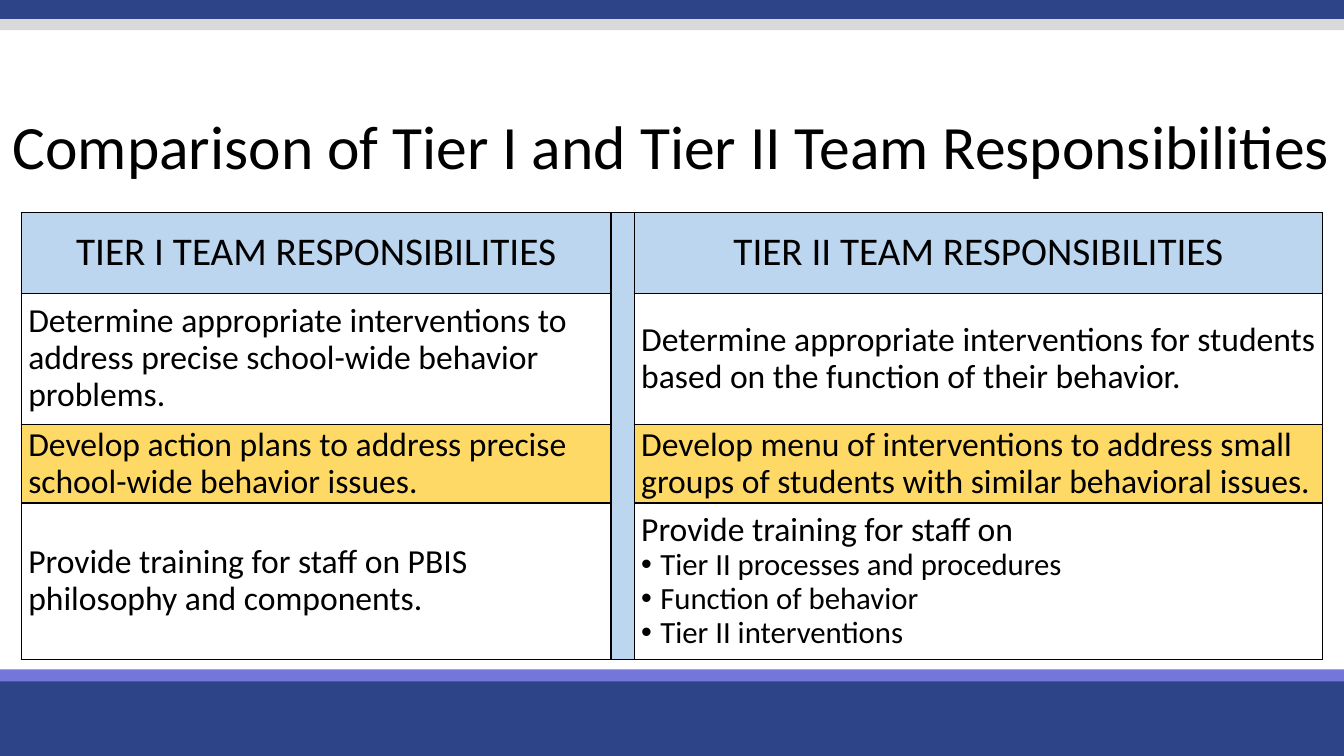
from dataclasses import dataclass
from typing import Optional

from lxml.etree import SubElement
from pptx import Presentation
from pptx.dml.color import RGBColor
from pptx.enum.shapes import MSO_SHAPE
from pptx.enum.text import MSO_ANCHOR, PP_ALIGN
from pptx.oxml.ns import qn
from pptx.util import Emu, Inches, Pt

SLIDE_WIDTH, SLIDE_HEIGHT = Inches(13.333), Inches(7.5)
FONT = "Calibri"
BLACK, NAVY, VIOLET, GREY = "000000", "2E4488", "7476DA", "D9D9D9"
LIGHT_BLUE, GOLD = "BBD6EE", "FFD966"

# Shares of the slide's size, in percent
TABLE_LEFT, TABLE_TOP = 1.58, 28.13
COLUMN_WIDTHS = (43.88, 1.73, 51.22)
ROW_HEIGHTS = (10.67, 17.33, 10.4, 20.67)
TIER_COLUMNS = (0, 2)
DIVIDER_COLUMN = 1


@dataclass
class Band:
    top: float
    height: float
    color: str


@dataclass
class Line:
    text: str
    size: int = 24
    centered: bool = False
    bullet: bool = False


@dataclass
class Row:
    tier_one: list[Line]
    tier_two: list[Line]
    fill: Optional[str] = None


BANDS = [
    Band(89.33, 10.67, NAVY),
    Band(88.53, 1.6, VIOLET),
    Band(-0.4, 2.93, NAVY),
    Band(2.53, 1.47, GREY),
]
ROWS = [
    Row([Line("TIER I TEAM RESPONSIBILITIES", 28, centered=True)],
        [Line("TIER II TEAM RESPONSIBILITIES", 28, centered=True)], LIGHT_BLUE),
    Row([Line("Determine appropriate interventions to address precise "
              "school-wide behavior problems.")],
        [Line("Determine appropriate interventions for students based on "
              "the function of their behavior.")]),
    Row([Line("Develop action plans to address precise school-wide behavior issues.")],
        [Line("Develop menu of interventions to address small groups of "
              "students with similar behavioral issues.")], GOLD),
    Row([Line("Provide training for staff on PBIS philosophy and components.")],
        [Line("Provide training for staff on"),
         Line("Tier II processes and procedures", 22, bullet=True),
         Line("Function of behavior", 22, bullet=True),
         Line("Tier II interventions", 22, bullet=True)]),
]


def across(percent: float) -> Emu:
    return Emu(round(SLIDE_WIDTH * percent / 100))


def down(percent: float) -> Emu:
    return Emu(round(SLIDE_HEIGHT * percent / 100))


def rgb(color: str) -> RGBColor:
    return RGBColor.from_string(color)


def add_band(slide, band: Band) -> None:
    shape = slide.shapes.add_shape(
        MSO_SHAPE.RECTANGLE, 0, down(band.top), SLIDE_WIDTH, down(band.height))
    shape.shadow.inherit = False
    shape.fill.solid()
    shape.fill.fore_color.rgb = rgb(band.color)
    shape.line.fill.background()


def add_bullet(paragraph) -> None:
    properties = paragraph._p.get_or_add_pPr()
    properties.set("marL", str(Inches(0.19)))
    properties.set("indent", str(-Inches(0.19)))
    SubElement(properties, qn("a:buFont"), typeface="Arial")
    SubElement(properties, qn("a:buChar"), char="•")


def write_lines(text_frame, lines: list[Line]) -> None:
    for index, line in enumerate(lines):
        paragraph = text_frame.add_paragraph() if index else text_frame.paragraphs[0]
        paragraph.alignment = PP_ALIGN.CENTER if line.centered else PP_ALIGN.LEFT
        paragraph.line_spacing = 0.9
        if line.bullet:
            add_bullet(paragraph)
        run = paragraph.add_run()
        run.text = line.text
        run.font.name = FONT
        run.font.size = Pt(line.size)
        run.font.color.rgb = rgb(BLACK)


def format_cell(cell, fill: Optional[str]) -> None:
    cell.margin_left = cell.margin_right = Inches(0.07)
    cell.margin_top = cell.margin_bottom = 0
    cell.vertical_anchor = MSO_ANCHOR.MIDDLE
    properties = cell._tc.get_or_add_tcPr()
    for side in ("a:lnL", "a:lnR", "a:lnT", "a:lnB"):
        border = SubElement(properties, qn(side), w=str(Pt(1)))
        SubElement(SubElement(border, qn("a:solidFill")), qn("a:srgbClr"), val=BLACK)
    if fill:
        cell.fill.solid()
        cell.fill.fore_color.rgb = rgb(fill)
    else:
        cell.fill.background()


def add_comparison_table(slide) -> None:
    table = slide.shapes.add_table(
        len(ROWS), len(COLUMN_WIDTHS), across(TABLE_LEFT), down(TABLE_TOP),
        across(sum(COLUMN_WIDTHS)), down(sum(ROW_HEIGHTS))).table
    table.first_row = table.horz_banding = False
    for column, width in zip(table.columns, COLUMN_WIDTHS):
        column.width = across(width)
    for index, (row, height) in enumerate(zip(ROWS, ROW_HEIGHTS)):
        table.rows[index].height = down(height)
        format_cell(table.cell(index, DIVIDER_COLUMN), LIGHT_BLUE)
        for column_index, lines in zip(TIER_COLUMNS, (row.tier_one, row.tier_two)):
            cell = table.cell(index, column_index)
            format_cell(cell, row.fill)
            write_lines(cell.text_frame, lines)
    table.cell(0, DIVIDER_COLUMN).merge(table.cell(len(ROWS) - 1, DIVIDER_COLUMN))


def add_title(slide, text: str) -> None:
    text_frame = slide.shapes.add_textbox(
        0, down(11.33), SLIDE_WIDTH, down(16.8)).text_frame
    text_frame.word_wrap = True
    text_frame.vertical_anchor = MSO_ANCHOR.MIDDLE
    write_lines(text_frame, [Line(text, 44, centered=True)])


def main() -> None:
    presentation = Presentation()
    presentation.slide_width = SLIDE_WIDTH
    presentation.slide_height = SLIDE_HEIGHT
    slide = presentation.slides.add_slide(presentation.slide_layouts[6])
    for band in BANDS:
        add_band(slide, band)
    add_comparison_table(slide)
    add_title(slide, "Comparison of Tier I and Tier II Team Responsibilities")
    presentation.save("out.pptx")


if __name__ == "__main__":
    main()
